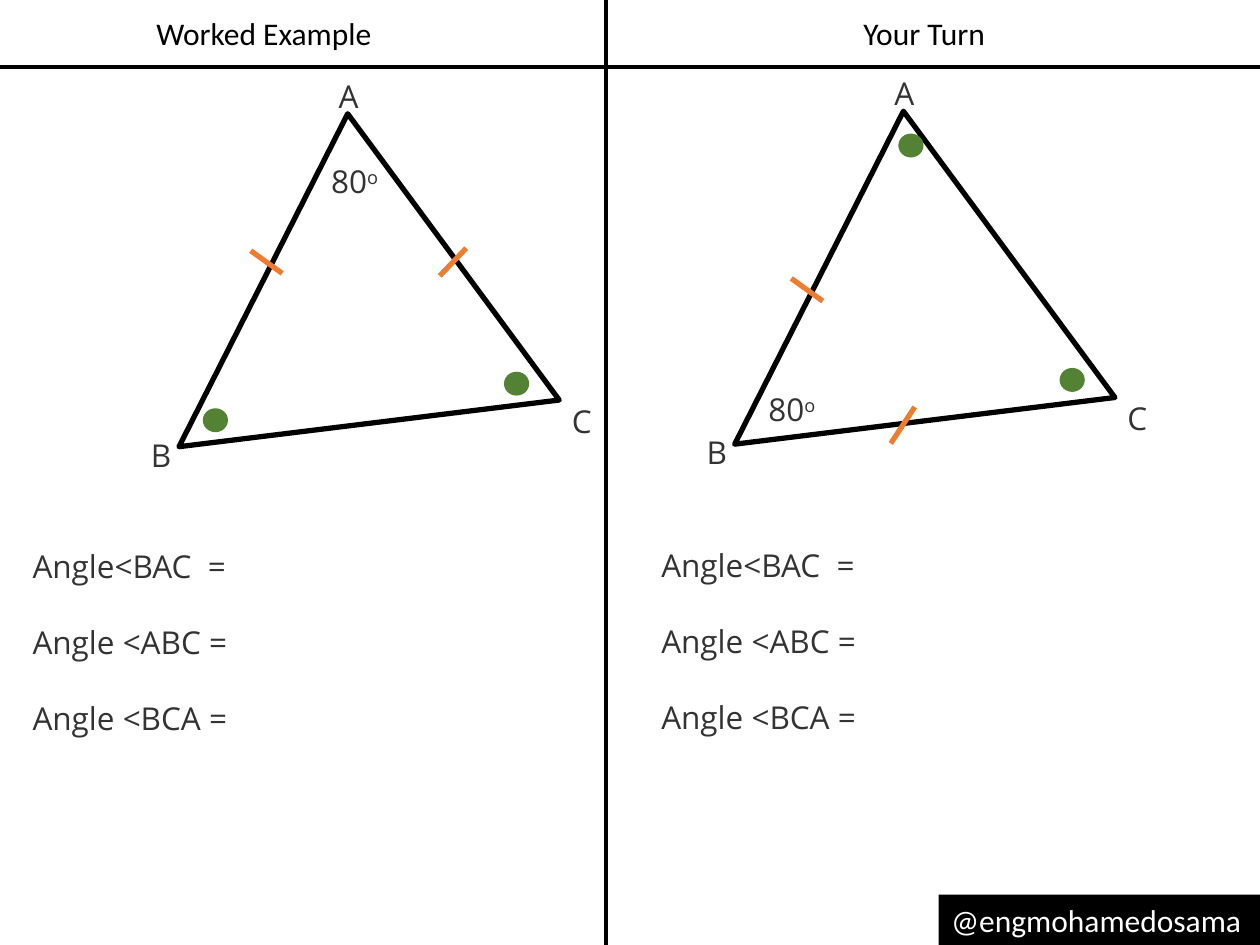
from dataclasses import dataclass

import lxml.etree
import pptx
import pptx.dml.color
import pptx.enum.shapes
import pptx.enum.text
import pptx.oxml.ns
import pptx.util

RGBColor = pptx.dml.color.RGBColor
Shape = pptx.enum.shapes.MSO_SHAPE
Align = pptx.enum.text.PP_ALIGN

BLACK = RGBColor(0x00, 0x00, 0x00)
WHITE = RGBColor(0xFF, 0xFF, 0xFF)
GREY = RGBColor(0x33, 0x33, 0x33)
ORANGE = RGBColor(0xED, 0x7D, 0x31)
GREEN = RGBColor(0x54, 0x82, 0x35)

# The slide is a grid of square cells, a tenth of an inch each.
COLUMNS, ROWS = 100, 75
CELL = pptx.util.Inches(0.1)
TEXT_HEIGHT = 4
ANSWER_LINE = pptx.util.Pt(21.7)
VERTEX_OFFSETS = {"C": (31.8, 22.3), "B": (-1.6, 25), "A": (13.3, -3.5)}
ANSWERS = ("Angle<BAC  =", "Angle <ABC =", "Angle <BCA =")

Point = tuple[float, float]


@dataclass(frozen=True)
class Panel:
    """One half of the slide; every point is (column, row)."""
    title: str
    title_at: Point
    triangle_at: Point
    known_angle_at: Point
    answers_at: Point
    ticks: tuple[tuple[Point, Point], ...]
    equal_angles: tuple[Point, ...]


PANELS = (
    Panel("Worked Example", (11.3, 0.6), (12.6, 9.1), (25.3, 12.4), (1.6, 42.9),
          (((37, 19.7), (34.9, 21.9)), ((22.4, 21.7), (19.9, 19.9))),
          ((16.1, 32.4), (40, 29.5))),
    Panel("Your Turn", (63.7, 0.6), (56.7, 8.9), (60, 30.5), (51.5, 42.8),
          (((72.6, 32.3), (70.7, 35.2)), ((65.3, 23.9), (62.8, 22.1))),
          ((71.3, 10.6), (84.1, 29.2))),
)


def cells(*counts: float) -> list[int]:
    return [round(count * CELL) for count in counts]


def style_text(frame, font: str, color: RGBColor) -> None:
    for paragraph in frame.paragraphs:
        for run in paragraph.runs:
            run.font.name = font
            run.font.size = pptx.util.Pt(18)
            run.font.color.rgb = color


def add_text(slide, text: str, at: Point, width: float, height: float = TEXT_HEIGHT,
             font: str = "Open Sans", color: RGBColor = GREY, wrap: bool = False):
    frame = slide.shapes.add_textbox(*cells(*at, width, height)).text_frame
    frame.word_wrap = wrap
    frame.text = text
    style_text(frame, font, color)
    return frame


def add_line(slide, start: Point, end: Point, color: RGBColor, weight: float) -> None:
    line = slide.shapes.add_connector(
        pptx.enum.shapes.MSO_CONNECTOR.STRAIGHT, *cells(*start, *end))
    line.line.color.rgb = color
    line.line.width = pptx.util.Pt(weight)
    properties = line._element.find(pptx.oxml.ns.qn("p:spPr"))
    lxml.etree.SubElement(properties, pptx.oxml.ns.qn("a:effectLst"))


def add_filled(slide, kind: Shape, at: Point, width: float, height: float, color: RGBColor):
    shape = slide.shapes.add_shape(kind, *cells(*at, width, height))
    shape.shadow.inherit = False
    shape.fill.solid()
    shape.fill.fore_color.rgb = color
    shape.line.fill.background()
    return shape


def add_triangle(slide, at: Point) -> None:
    triangle = slide.shapes.add_shape(Shape.ISOSCELES_TRIANGLE, *cells(*at, 30.4, 24.6))
    triangle.adjustments[0] = 0.543
    triangle.rotation = 353
    triangle.shadow.inherit = False
    triangle.fill.background()
    triangle.line.color.rgb = BLACK
    triangle.line.width = pptx.util.Pt(3)
    for vertex, (right, down) in VERTEX_OFFSETS.items():
        add_text(slide, vertex, (at[0] + right, at[1] + down), 3.6)


def add_known_angle(slide, at: Point) -> None:
    frame = add_text(slide, "80", at, 5.7)
    degree = frame.paragraphs[0].add_run()
    degree.text = "o"
    style_text(frame, "Open Sans", GREY)
    degree.font._element.set("baseline", "30000")


def add_answers(slide, at: Point) -> None:
    frame = add_text(slide, "\n".join(ANSWERS), at, 19.8, 16.2, wrap=True)
    for index, paragraph in enumerate(frame.paragraphs):
        paragraph.line_spacing = ANSWER_LINE
        paragraph.space_before = ANSWER_LINE if index else 0


def add_panel(slide, panel: Panel) -> None:
    title = add_text(slide, panel.title, panel.title_at, 19.3,
                     font="Calibri", color=BLACK, wrap=True)
    title.paragraphs[0].alignment = Align.CENTER
    add_triangle(slide, panel.triangle_at)
    add_known_angle(slide, panel.known_angle_at)
    add_answers(slide, panel.answers_at)
    for start, end in panel.ticks:
        add_line(slide, start, end, ORANGE, 3)
    for dot_at in panel.equal_angles:
        add_filled(slide, Shape.OVAL, dot_at, 2, 1.9, GREEN)


def add_handle(slide) -> None:
    banner = add_filled(slide, Shape.RECTANGLE, (74.5, 71), 25.7, TEXT_HEIGHT, BLACK)
    banner.text_frame.text = "@engmohamedosama"
    banner.text_frame.paragraphs[0].alignment = Align.LEFT
    style_text(banner.text_frame, "Calibri", WHITE)


def main() -> None:
    presentation = pptx.Presentation()
    presentation.slide_width, presentation.slide_height = cells(COLUMNS, ROWS)
    slide = presentation.slides.add_slide(presentation.slide_layouts[6])
    add_line(slide, (48.1, 0), (48.1, ROWS), BLACK, 2.5)
    add_line(slide, (0, 5.3), (COLUMNS, 5.3), BLACK, 2.5)
    for panel in PANELS:
        add_panel(slide, panel)
    add_handle(slide)
    presentation.save("out.pptx")


if __name__ == "__main__":
    main()
